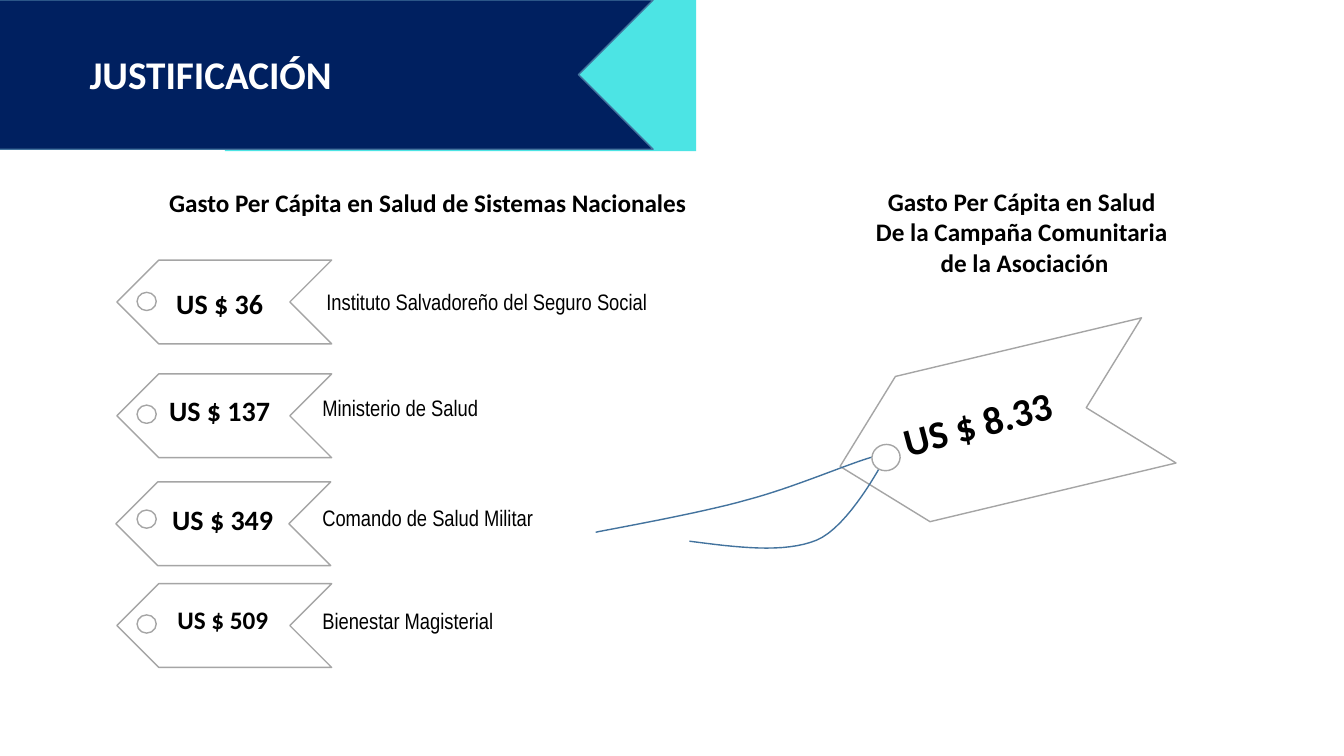
from dataclasses import dataclass

from lxml.etree import SubElement
from pptx import Presentation
from pptx.dml.color import RGBColor
from pptx.enum.shapes import MSO_SHAPE
from pptx.enum.text import PP_ALIGN
from pptx.oxml.ns import qn
from pptx.util import Pt


@dataclass(frozen=True)
class Theme:
    navy: str = "002060"
    turquoise: str = "4CE4E4"
    white: str = "FFFFFF"
    black: str = "000000"
    gray: str = "A5A5A5"
    blue: str = "43739E"
    heading_font: str = "Calibri"
    label_font: str = "Arial Narrow"
    title_size: int = 28
    amount_size: int = 20
    heading_size: int = 18
    label_size: int = 16
    line_width: int = 1


THEME = Theme()
CENTER, LEFT = PP_ALIGN.CENTER, PP_ALIGN.LEFT

# Content
TITLE = "JUSTIFICACIÓN"
SYSTEMS_HEADING = "Gasto Per Cápita en Salud de Sistemas Nacionales"
CAMPAIGN_HEADING = "\n".join([
    "Gasto Per Cápita en Salud ",
    "De la Campaña Comunitaria ",
    "de la Asociación",
])
CAMPAIGN_AMOUNT = "US $ 8.33"

# Amount, its size, amount left and top, tag left and top, hole top
PRICE_TAGS = [
    ("US $ 36", THEME.amount_size, 108.7, 200.9, 83.5, 185.8, 208.8),
    ("US $ 137", THEME.amount_size, 108.7, 277.2, 83.5, 267.1, 289.4),
    ("US $ 349", THEME.amount_size, 110.9, 355.7, 82.8, 344.2, 364.3),
    ("US $ 509", THEME.heading_size, 110.9, 428.4, 83.5, 416.9, 439.2),
]
# System, left, top, alignment
SYSTEMS = [
    ("Instituto Salvadoreño del Seguro Social", 165.6, 202.3, CENTER),
    ("Ministerio de Salud", 223.2, 277.9, LEFT),
    ("Comando de Salud Militar", 223.2, 356.4, LEFT),
    ("Bienestar Magisterial", 223.2, 429.8, LEFT),
]

# String of the large tag: a start point, then Bézier curves (two controls, end)
STRING_START = (492.5, 386.6)
STRING_CURVES = [
    ((526.3, 391), (560.2, 395.3), (583.2, 385.9)),
    ((606.2, 376.6), (630.7, 329.8), (630.7, 329.8)),
    ((630, 329), (640.1, 321.1), (624.2, 326.2)),
    ((607.7, 330.5), (566.6, 348.5), (533.5, 357.1)),
    ((501.1, 366.5), (432, 378.7), (425.5, 380.2)),
]
STEPS = 16


def color(code):
    return RGBColor.from_string(code)


def set_line(shape, code):
    shape.line.color.rgb = color(code)
    shape.line.width = Pt(THEME.line_width)


def add_figure(slide, kind, box, fill, line=None, rotation=0):
    shape = slide.shapes.add_shape(kind, *map(Pt, box))
    shape.shadow.inherit = False
    shape.rotation = rotation
    shape.fill.solid()
    shape.fill.fore_color.rgb = color(fill)
    if line:
        set_line(shape, line)
    else:
        shape.line.fill.background()
    return shape


def add_text(slide, text, box, size, code=THEME.black, font=THEME.heading_font,
             bold=True, align=CENTER, rotation=0):
    shape = slide.shapes.add_textbox(*map(Pt, box))
    shape.rotation = rotation
    shape.text_frame.word_wrap = True
    shape.text_frame.text = text
    for paragraph in shape.text_frame.paragraphs:
        paragraph.alignment = align
        for run in paragraph.runs:
            run.font.name = font
            run.font.size = Pt(size)
            run.font.bold = bold
            run.font.color.rgb = color(code)


def add_tag(slide, box, hole, rotation=180):
    add_figure(slide, MSO_SHAPE.CHEVRON, box, THEME.white, THEME.gray, rotation)
    if hole:
        add_figure(slide, MSO_SHAPE.OVAL, hole, THEME.white, THEME.gray)


def curve_points(start, curves):
    points = []
    for first, second, end in curves:
        for step in range(1, STEPS + 1):
            t = step / STEPS
            u = 1 - t
            points.append(tuple(
                Pt(u**3 * a + 3 * u * u * t * b + 3 * u * t * t * c + t**3 * d)
                for a, b, c, d in zip(start, first, second, end)))
        start = end
    return points


def add_string(slide):
    builder = slide.shapes.build_freeform(*map(Pt, STRING_START))
    builder.add_line_segments(curve_points(STRING_START, STRING_CURVES), close=False)
    shape = builder.convert_to_shape()
    shape.fill.background()
    set_line(shape, THEME.blue)
    SubElement(shape.element.spPr, qn("a:effectLst"))


def main():
    presentation = Presentation()
    presentation.slide_width, presentation.slide_height = Pt(960), Pt(540)
    slide = presentation.slides.add_slide(presentation.slide_layouts[6])

    # Title banner
    add_figure(slide, MSO_SHAPE.RECTANGLE, (160.6, -12.2, 336.6, 120.2), THEME.turquoise)
    add_figure(slide, MSO_SHAPE.CHEVRON, (-96.5, 0, 563, 106.6), THEME.navy,
               THEME.blue, rotation=180)
    add_text(slide, TITLE, (56.9, 32.4, 234.7, 41), THEME.title_size,
             THEME.white, align=LEFT)

    # National systems
    add_text(slide, SYSTEMS_HEADING, (97.9, 130.3, 415.4, 28.8), THEME.heading_size)
    for amount, size, left, top, tag_left, tag_top, hole_top in PRICE_TAGS:
        add_tag(slide, (tag_left, tag_top, 153.4, 59.8), (97.9, hole_top, 13.7, 13))
        add_text(slide, amount, (left, top, 96.5, 31.7), size)
    for system, left, top, align in SYSTEMS:
        add_text(slide, system, (left, top, 364.3, 26.6), THEME.label_size,
                 font=THEME.label_font, bold=False, align=align)

    # Community campaign
    add_tag(slide, (596.9, 252.7, 234, 106.6), None, rotation=166.6)
    add_text(slide, CAMPAIGN_AMOUNT, (626.4, 281.5, 143.3, 41), THEME.title_size,
             rotation=345.2)
    add_text(slide, CAMPAIGN_HEADING, (524.2, 129.6, 415.4, 72.7), THEME.heading_size)
    add_string(slide)
    add_figure(slide, MSO_SHAPE.OVAL, (622.8, 317.5, 20.2, 18.7), THEME.white,
               THEME.gray, rotation=346.6)

    presentation.save("out.pptx")


if __name__ == "__main__":
    main()
